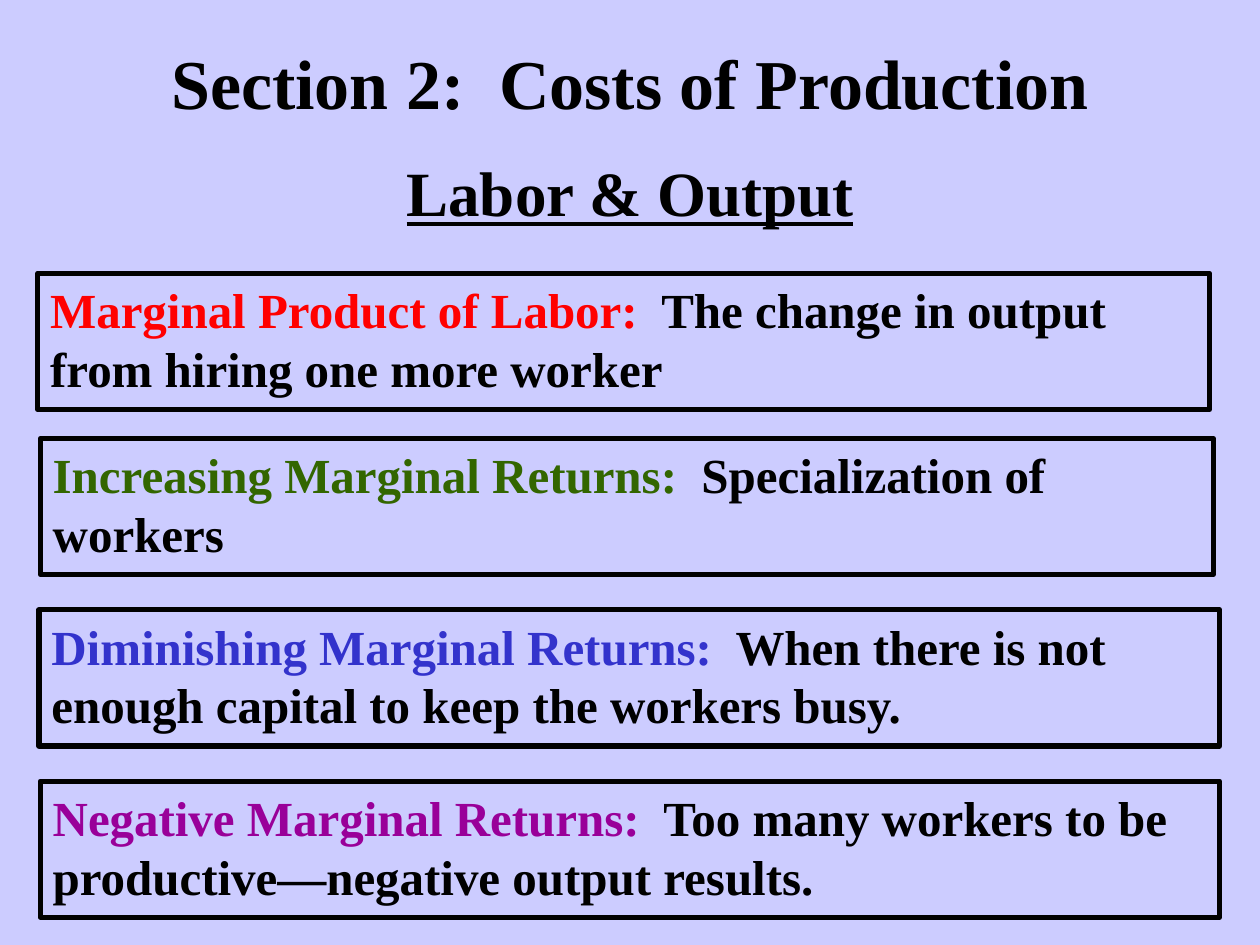
from pptx import Presentation
from pptx.dml.color import RGBColor
from pptx.enum.shapes import MSO_SHAPE
from pptx.enum.text import MSO_ANCHOR, MSO_AUTO_SIZE, PP_ALIGN
from pptx.util import Inches, Pt

RECT = MSO_SHAPE.RECTANGLE
TOP, MIDDLE = MSO_ANCHOR.TOP, MSO_ANCHOR.MIDDLE
GROW = MSO_AUTO_SIZE.SHAPE_TO_FIT_TEXT
LEFT, CENTER = PP_ALIGN.LEFT, PP_ALIGN.CENTER

LAVENDER = RGBColor(0xCC, 0xCC, 0xFF)
BLACK = RGBColor(0x00, 0x00, 0x00)
RED = RGBColor(0xFF, 0x00, 0x00)
GREEN = RGBColor(0x33, 0x66, 0x00)
BLUE = RGBColor(0x33, 0x33, 0xCC)
PURPLE = RGBColor(0x99, 0x00, 0x99)

DEFINITIONS = [
    (0.30, 2.17, 9.30, RED, "Marginal Product of Labor:",
     "The change in output from hiring one more worker"),
    (0.32, 3.48, 9.31, GREEN, "Increasing Marginal Returns:",
     "Specialization of workers"),
    (0.31, 4.84, 9.37, BLUE, "Diminishing Marginal Returns:",
     "When there is not enough capital to keep the workers busy."),
    (0.32, 6.20, 9.36, PURPLE, "Negative Marginal Returns:",
     "Too many workers to be productive—negative output results."),
]


class SlideBuilder:
    font = "Times New Roman"
    term_size = 28
    box_height = 1.08

    def __init__(self, slide):
        self.s = slide
        fill = slide.background.fill
        fill.solid()
        fill.fore_color.rgb = LAVENDER

    def format_run(self, r, size, color=BLACK, underline=None):
        r.font.name = self.font
        r.font.size = Pt(size)
        r.font.bold = True
        r.font.underline = underline
        r.font.color.rgb = color

    def heading(self, x, y, w, h, text, size, anchor=TOP, spacing=None, underline=None):
        tf = self.s.shapes.add_textbox(Inches(x), Inches(y), Inches(w), Inches(h)).text_frame
        tf.word_wrap = True
        tf.vertical_anchor = anchor
        tf.text = text
        p = tf.paragraphs[0]
        p.alignment = CENTER
        p.line_spacing = spacing
        self.format_run(p.runs[0], size, underline=underline)

    def definition(self, x, y, w, color, term, meaning):
        sp = self.s.shapes.add_shape(RECT, Inches(x), Inches(y), Inches(w), Inches(self.box_height))
        sp.shadow.inherit = False
        sp.fill.background()
        sp.line.color.rgb = BLACK
        sp.line.width = Pt(3)
        tf = sp.text_frame
        tf.word_wrap = True
        tf.auto_size = GROW
        tf.vertical_anchor = TOP
        tf.text = term
        p = tf.paragraphs[0]
        p.alignment = LEFT
        self.format_run(p.runs[0], self.term_size, color)
        r = p.add_run()
        r.text = "  " + meaning
        self.format_run(r, self.term_size)


def main():
    prs = Presentation()
    prs.slide_width, prs.slide_height = Inches(10), Inches(7.5)
    builder = SlideBuilder(prs.slides.add_slide(prs.slide_layouts[6]))
    builder.heading(0.75, 0.3, 8.5, 0.7, "Section 2:  Costs of Production", 40, anchor=MIDDLE)
    builder.heading(2.71, 1.24, 4.58, 0.68, "Labor & Output", 36, spacing=0.9, underline=True)
    for definition in DEFINITIONS:
        builder.definition(*definition)
    prs.save("out.pptx")


if __name__ == "__main__":
    main()
